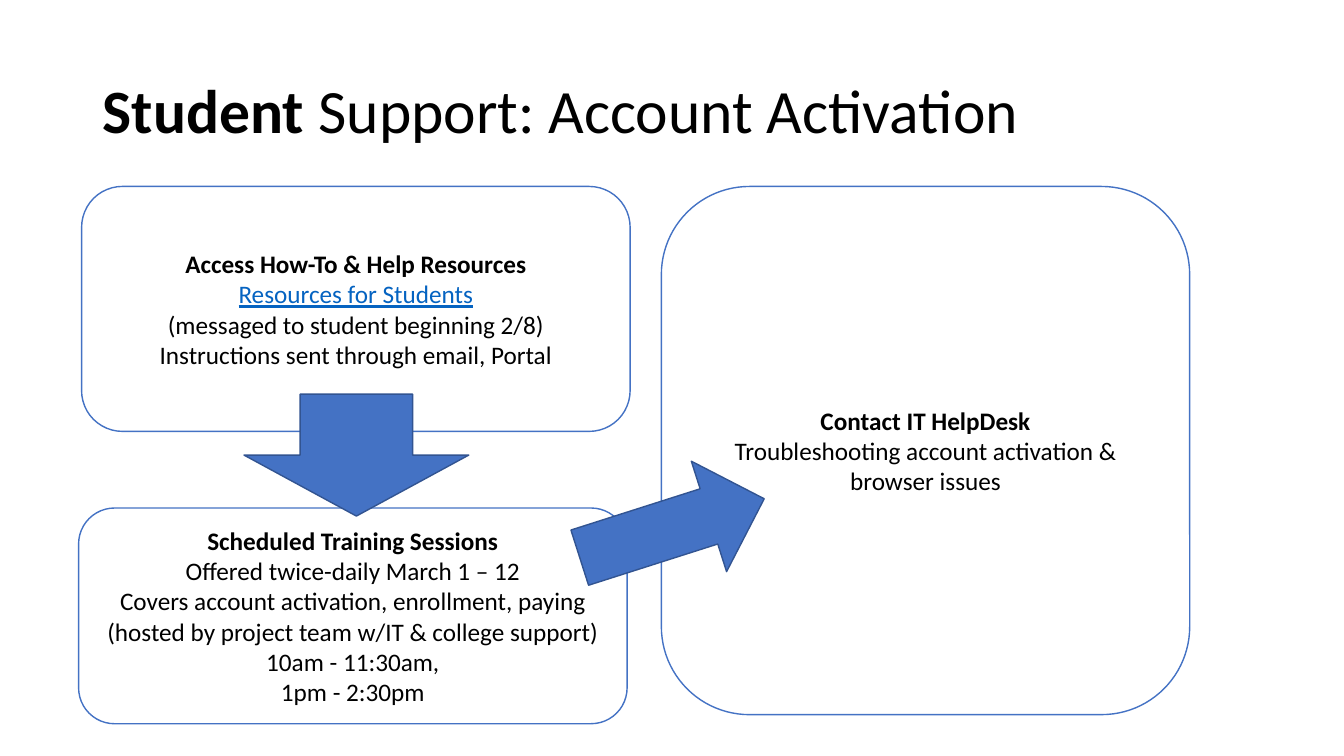
from pptx import Presentation
from pptx.dml.color import RGBColor
from pptx.enum.shapes import MSO_SHAPE
from pptx.enum.text import MSO_ANCHOR, MSO_AUTO_SIZE, PP_ALIGN
from pptx.util import Inches, Pt

ROUND = MSO_SHAPE.ROUNDED_RECTANGLE
DOWN = MSO_SHAPE.DOWN_ARROW
MIDDLE = MSO_ANCHOR.MIDDLE
LEFT, CENTER = PP_ALIGN.LEFT, PP_ALIGN.CENTER
FIXED = MSO_AUTO_SIZE.NONE

BLACK = RGBColor(0x00, 0x00, 0x00)
WHITE = RGBColor(0xFF, 0xFF, 0xFF)
BLUE = RGBColor(0x44, 0x72, 0xC4)
NAVY = RGBColor(0x32, 0x54, 0x91)
LINK = RGBColor(0x05, 0x63, 0xC1)
FONT = "Calibri"

TITLE = ("Student", " Support: Account Activation")
TITLE_BOX = (0.92, 0.4, 11.5, 1.45)
LINKED = "Resources for Students"
CARDS = [
    ((0.81, 1.85, 5.44, 2.43), [
        "Access How-To & Help Resources",
        LINKED,
        "(messaged to student beginning 2/8)",
        "Instructions sent through email, Portal",
    ]),
    ((6.56, 1.85, 5.24, 5.24), [
        "Contact IT HelpDesk",
        "Troubleshooting account activation & browser issues",
    ]),
    ((0.78, 5.04, 5.44, 2.14), [
        "Scheduled Training Sessions",
        "Offered twice-daily March 1 – 12",
        "Covers account activation, enrollment, paying",
        "(hosted by project team w/IT & college support)",
        "10am - 11:30am,",
        "1pm - 2:30pm",
    ]),
]
ARROWS = [
    ((2.42, 3.91, 2.23, 1.21), 0),
    ((6.09, 4.28, 1.15, 1.92), 252.3),
]


def style(run, size, bold, color=BLACK):
    font = run.font
    font.name, font.size, font.bold = FONT, Pt(size), bold
    font.color.rgb = color


def add_shape(slide, kind, box, fill, line):
    shape = slide.shapes.add_shape(kind, *map(Inches, box))
    shape.shadow.inherit = False
    shape.fill.solid()
    shape.fill.fore_color.rgb = fill
    shape.line.color.rgb = line
    shape.line.width = Pt(1)
    return shape


def add_title(slide):
    title = slide.shapes.title
    title.left, title.top, title.width, title.height = map(Inches, TITLE_BOX)
    frame = title.text_frame
    frame.auto_size = FIXED
    frame.word_wrap = True
    frame.vertical_anchor = MIDDLE
    para = frame.paragraphs[0]
    para.alignment = LEFT
    para.line_spacing = 0.9
    for i, part in enumerate(TITLE):
        run = para.add_run()
        run.text = part
        style(run, 44, i == 0)


def add_card(slide, box, lines):
    frame = add_shape(slide, ROUND, box, WHITE, BLUE).text_frame
    frame.word_wrap = True
    frame.vertical_anchor = MIDDLE
    frame.text = "\n".join(lines)
    for i, para in enumerate(frame.paragraphs):
        para.alignment = CENTER
        run = para.runs[0]
        linked = run.text == LINKED
        style(run, 18, i == 0, LINK if linked else BLACK)
        run.font.underline = linked


def main():
    deck = Presentation()
    deck.slide_width, deck.slide_height = Inches(13.33), Inches(7.5)
    slide = deck.slides.add_slide(deck.slide_layouts[5])
    add_title(slide)
    for box, lines in CARDS:
        add_card(slide, box, lines)
    for box, turn in ARROWS:
        add_shape(slide, DOWN, box, BLUE, NAVY).rotation = turn
    deck.save("out.pptx")


if __name__ == "__main__":
    main()
